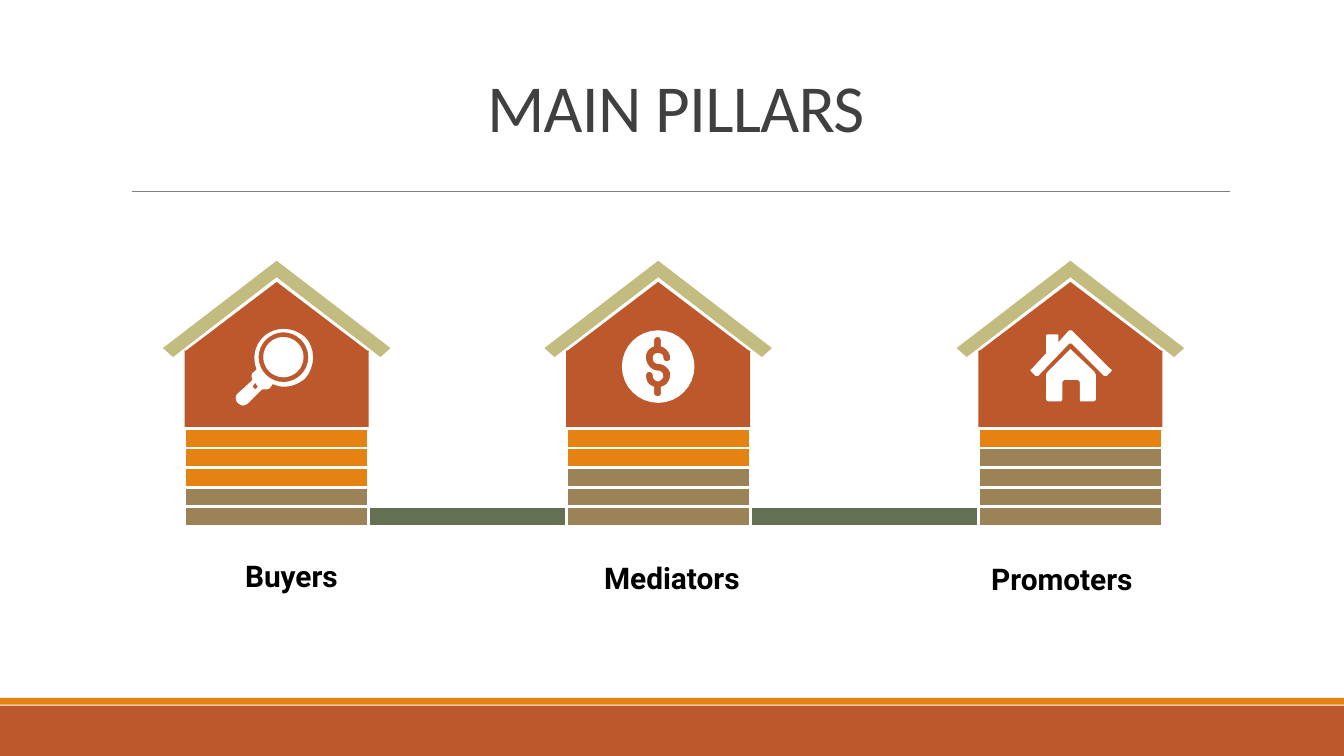
import dataclasses
import typing

import lxml.etree
import pptx
import pptx.dml.color
import pptx.enum.shapes
import pptx.enum.text
import pptx.oxml.ns
import pptx.util

Cm = pptx.util.Cm
Shape = pptx.enum.shapes.MSO_SHAPE
Contour = list[tuple[float, ...]]

COLORS = {
    "rust": "BD582C", "orange": "E48312", "khaki": "C2BC80", "brown": "9B8357",
    "green": "637052", "gray": "808080", "title": "404040", "white": "FFFFFF",
    "black": "000000",
}
ICON_UNIT = Cm(2.54) / 100
ICON_MIDDLE = Cm(6.93)
ROOF_TOP = 4.93
ROOF = [(0, 0), (-2.15, 1.65), (-1.96, 1.82), (0, 0.31), (1.96, 1.82), (2.15, 1.65)]
WALL_WIDTH = 3.48
FLOOR_TOP, FLOOR_HEIGHT, FLOOR_COUNT = 8.1, 0.37, 5


@dataclasses.dataclass
class Pillar:
    label: str
    axis: float
    label_center: float
    label_top: float
    orange_floors: int
    icon: list[list[Contour]]


def circle(x: float, y: float, radius: float) -> Contour:
    pull = 0.55 * radius
    left, right, top, bottom = x - radius, x + radius, y - radius, y + radius
    return [
        (x, top),
        (x + pull, top, right, y - pull, right, y),
        (right, y + pull, x + pull, bottom, x, bottom),
        (x - pull, bottom, left, y + pull, left, y),
        (left, y - pull, x - pull, top, x, top),
    ]


DOLLAR = [
    (0, -22), (1, -22, 2, -21, 2, -19), (2, -15), (6, -14, 9, -10, 9, -6),
    (9, -5, 8, -4, 6, -4), (5, -4, 4, -5, 4, -6), (4, -9, 2, -10, 0, -10),
    (-1, -10, -2, -10, -3, -9), (-5, -7, -4, -2, 0, -2), (4, -2, 8, 1, 9, 5),
    (9, 10, 7, 14, 2, 15), (2, 20), (2, 21, 1, 22, 0, 22), (-2, 22, -3, 21, -3, 20),
    (-3, 15), (-7, 14, -9, 11, -9, 7), (-9, 5, -8, 4, -7, 4), (-5, 4, -4, 5, -4, 7),
    (-4, 9, -2, 11, 0, 11), (1, 11, 2, 10, 3, 9), (5, 7, 3, 3, 0, 3),
    (-5, 3, -8, -1, -9, -5), (-10, -10, -7, -14, -3, -15), (-3, -19),
    (-3, -21, -2, -22, 0, -22),
]
MAGNIFIER = [
    (5, -28), (0, -28, -6, -26, -10, -22), (-17, -15, -18, -6, -15, 2), (-17, 4),
    (-19, 5, -19, 8, -18, 10), (-29, 20), (-31, 22, -31, 25, -29, 27),
    (-28, 28, -26, 29, -25, 29), (-24, 29, -22, 28, -21, 27), (-11, 17),
    (-10, 17, -10, 17, -9, 17), (-8, 17, -6, 17, -5, 16), (-3, 13),
    (0, 14, 2, 15, 5, 15), (11, 15, 16, 13, 21, 9), (29, 0, 29, -14, 21, -22),
    (16, -26, 11, -28, 5, -28),
]
SLOT = [(-16, 12), (-14, 15), (-16, 17), (-18, 15)]
HOME_WALLS = [
    (17, 26), (18, 26, 19, 25, 19, 24), (19, 6), (19, 6, 18, 5, 18, 4), (1, -12),
    (0, -13), (-1, -12), (-16, 3), (-17, 4, -18, 5, -18, 6), (-18, 24),
    (-18, 25, -17, 26, -16, 26), (-7, 26), (-7, 26, -6, 25, -6, 24), (-6, 12),
    (-6, 11, -5, 10, -4, 10), (5, 10), (6, 10, 7, 11, 7, 12), (7, 24),
    (7, 25, 7, 26, 8, 26),
]
HOME_ROOF = [
    (26, 7), (27, 7), (30, 4), (31, 3, 31, 2, 30, 2), (1, -27), (0, -27), (-1, -27),
    (-9, -18), (-9, -23), (-9, -24, -10, -24, -11, -24), (-16, -24),
    (-17, -24, -18, -24, -18, -23), (-18, -10), (-29, 2), (-30, 2, -30, 3, -29, 4),
    (-26, 7), (-25, 7), (-24, 7), (-1, -17), (0, -17), (1, -17), (25, 7),
]
PILLARS = [
    Pillar("Buyers", 5.23, 5.51, 10.2, 3,
           [[MAGNIFIER, circle(5, -7, 18.5), SLOT], [circle(5, -7, 15)]]),
    Pillar("Mediators", 12.44, 12.7, 10.22, 2, [[circle(0, 0, 27), DOLLAR]]),
    Pillar("Promoters", 20.23, 20.07, 10.24, 1, [[HOME_WALLS, HOME_ROOF]]),
]


def rgb(color: str) -> pptx.dml.color.RGBColor:
    return pptx.dml.color.RGBColor.from_string(COLORS[color])


def paint(shape: typing.Any, color: str, outlined: bool = False) -> None:
    shape.shadow.inherit = False
    shape.fill.solid()
    shape.fill.fore_color.rgb = rgb(color)
    if outlined:
        shape.line.color.rgb = rgb("white")
        shape.line.width = pptx.util.Pt(1.5)
    else:
        shape.line.fill.background()


def draw_preset(parent: typing.Any, kind: Shape, left: float, top: float,
                width: float, height: float, color: str, outlined: bool = False) -> None:
    shape = parent.add_shape(kind, Cm(left), Cm(top), Cm(width), Cm(height))
    paint(shape, color, outlined)


def flatten(contour: Contour, steps: int = 8) -> list[tuple[float, float]]:
    points = [contour[0]]
    for segment in contour[1:]:
        if len(segment) == 2:
            points.append(segment)
            continue
        knots = [points[-1], segment[:2], segment[2:4], segment[4:]]
        for step in range(1, steps + 1):
            t = step / steps
            weights = ((1 - t) ** 3, 3 * t * (1 - t) ** 2, 3 * t * t * (1 - t), t ** 3)
            points.append(tuple(
                sum(weight * knot[axis] for weight, knot in zip(weights, knots))
                for axis in (0, 1)))
    return points


def draw_outline(parent: typing.Any, contours: list[Contour], unit: float,
                 x: int, y: int, color: str) -> None:
    builder = None
    for contour in contours:
        points = [(px * unit, py * unit) for px, py in flatten(contour)]
        if builder is None:
            builder = parent.build_freeform(*points[0])
        else:
            builder.move_to(*points[0])
        builder.add_line_segments(points[1:], close=True)
    paint(builder.convert_to_shape(x, y), color)


def write_text(box: typing.Any, text: str, color: str, spacing: float, after: float,
               anchor: typing.Any, font: dict[str, typing.Any]) -> typing.Any:
    frame = box.text_frame
    frame_format = {"word_wrap": True, "vertical_anchor": anchor,
                    "auto_size": pptx.enum.text.MSO_AUTO_SIZE.NONE}
    frame_format |= {f"margin_{side}": Cm(0.25) for side in ("left", "right", "top", "bottom")}
    para = frame.paragraphs[0]
    span = para.add_run()
    span.text = text
    para_format = {"alignment": pptx.enum.text.PP_ALIGN.CENTER, "line_spacing": spacing,
                   "space_before": pptx.util.Pt(0), "space_after": pptx.util.Pt(after)}
    for target, values in ((frame, frame_format), (para, para_format), (span.font, font)):
        for name, value in values.items():
            setattr(target, name, value)
    span.font.color.rgb = rgb(color)
    return span


def draw_pillar(page: typing.Any, pillar: Pillar) -> None:
    house = page.shapes.add_group_shape().shapes
    left = pillar.axis - WALL_WIDTH / 2
    draw_outline(house, [ROOF], Cm(1), Cm(pillar.axis), Cm(ROOF_TOP), "khaki")
    draw_preset(house, Shape.ISOSCELES_TRIANGLE, left, 5.33, WALL_WIDTH, 1.32, "rust")
    draw_preset(house, Shape.RECTANGLE, left, 6.63, WALL_WIDTH, 1.47, "rust")
    for piece in pillar.icon:
        draw_outline(house, piece, ICON_UNIT, Cm(pillar.axis), ICON_MIDDLE, "white")
    for floor in reversed(range(FLOOR_COUNT)):
        color = "orange" if floor < pillar.orange_floors else "brown"
        draw_preset(house, Shape.RECTANGLE, left, FLOOR_TOP + floor * FLOOR_HEIGHT,
                    WALL_WIDTH, FLOOR_HEIGHT, color, True)
    box = page.shapes.add_textbox(Cm(pillar.label_center - 2.49), Cm(pillar.label_top),
                                  Cm(4.98), Cm(1.32))
    write_text(box, pillar.label, "black", 1.15, 16, pptx.enum.text.MSO_ANCHOR.TOP,
               {"name": "Roboto", "size": pptx.util.Pt(16), "bold": True})


def main() -> None:
    deck = pptx.Presentation()
    deck.slide_width, deck.slide_height = Cm(25.4), Cm(14.29)
    page = deck.slides.add_slide(deck.slide_layouts[5])

    draw_preset(page.shapes, Shape.RECTANGLE, 0, 13.34, 25.4, 0.95, "rust")
    draw_preset(page.shapes, Shape.RECTANGLE, 0, 13.19, 25.4, 0.13, "orange")
    rule = page.shapes.add_connector(pptx.enum.shapes.MSO_CONNECTOR.STRAIGHT,
                                     Cm(2.49), Cm(3.62), Cm(23.24), Cm(3.62))
    rule.line.color.rgb = rgb("gray")
    rule.line.width = pptx.util.Pt(0.5)
    lxml.etree.SubElement(rule._element.spPr, pptx.oxml.ns.qn("a:effectLst"))

    title = page.shapes.title
    place = {"left": Cm(2.29), "top": Cm(0.61), "width": Cm(20.96), "height": Cm(3.02)}
    for name, value in place.items():
        setattr(title, name, value)
    span = write_text(title, "MAIN PILLARS", "title", 0.85, 0, pptx.enum.text.MSO_ANCHOR.MIDDLE,
                      {"name": "Calibri", "size": pptx.util.Pt(36), "bold": False})
    span.font._element.set("spc", "-40")

    draw_preset(page.shapes, Shape.RECTANGLE, 6.2, FLOOR_TOP + 4 * FLOOR_HEIGHT,
                12.42, FLOOR_HEIGHT, "green", True)
    for pillar in PILLARS:
        draw_pillar(page, pillar)
    deck.save("out.pptx")


if __name__ == "__main__":
    main()
